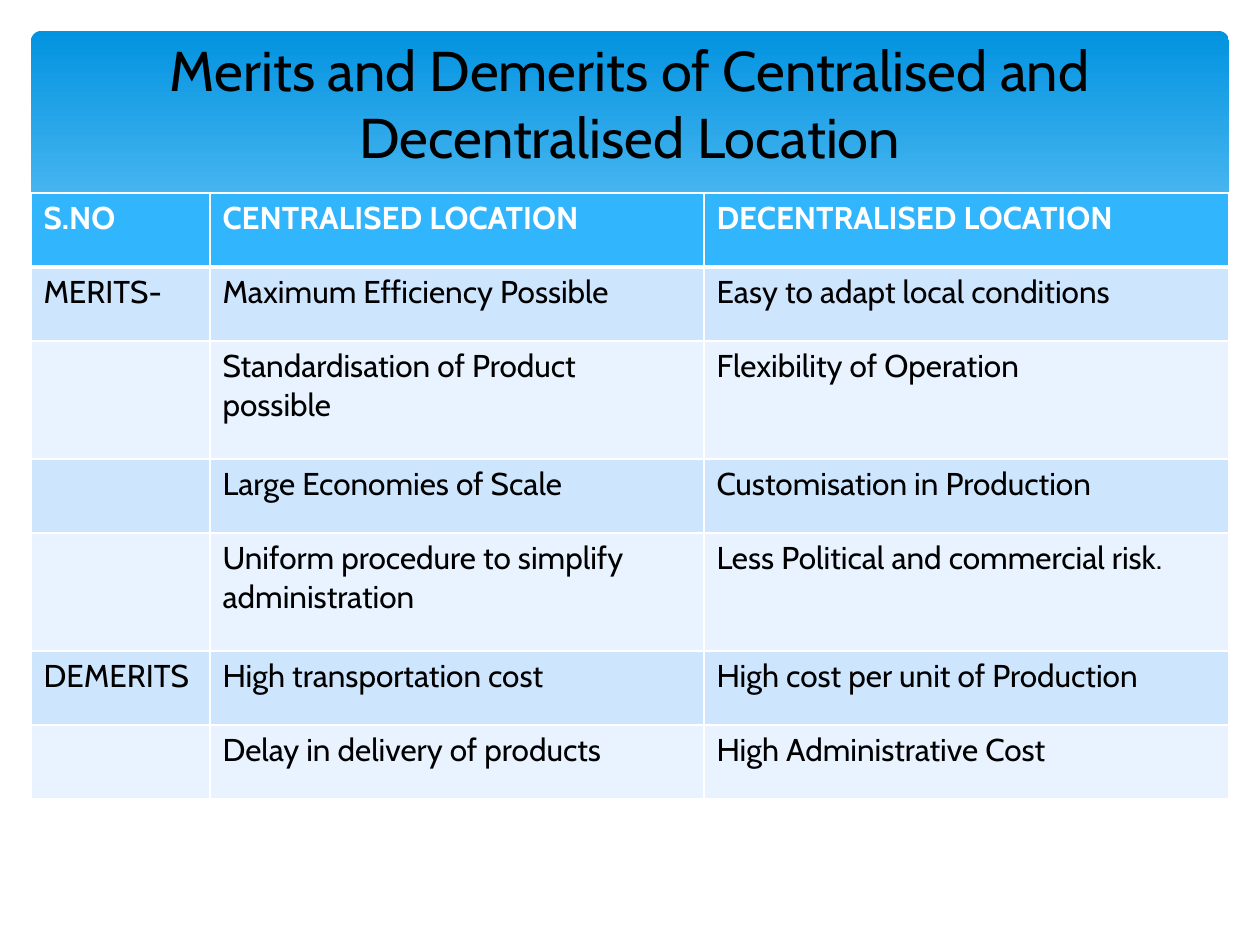
"""Slide comparing merits and demerits of centralised and decentralised location."""
from lxml import etree
from pptx import Presentation
from pptx.dml.color import RGBColor
from pptx.enum.shapes import MSO_SHAPE
from pptx.enum.text import MSO_ANCHOR, PP_ALIGN
from pptx.oxml.ns import qn
from pptx.util import Emu, Pt

ROUNDED = MSO_SHAPE.ROUNDED_RECTANGLE
MIDDLE = MSO_ANCHOR.MIDDLE
LEFT, CENTER = PP_ALIGN.LEFT, PP_ALIGN.CENTER
SCALE = 914400 / 126
COLORS = {
    "banner_top": "0293E0", "banner_bottom": "83D3FE", "header": "31B6FD",
    "dark_band": "CEE5FE", "light_band": "E8F3FF",
    "white": "FFFFFF", "black": "000000",
}


def px(length):
    return Emu(round(length * SCALE))


def write(frame, text, size=18, color="black", bold=False, align=LEFT):
    frame.word_wrap = True
    paragraph = frame.paragraphs[0]
    paragraph.alignment = align
    paragraph.font.size = Pt(size)
    run = paragraph.add_run()
    run.text = text
    run.font.name = "Cabin"
    run.font.size = Pt(size)
    run.font.bold = bold
    run.font.color.rgb = RGBColor.from_string(COLORS[color])


deck = Presentation()
deck.slide_width, deck.slide_height = px(1260), px(945)
slide = deck.slides.add_slide(deck.slide_layouts[6])

banner = slide.shapes.add_shape(ROUNDED, px(31), px(31), px(1198), px(340))
banner.shadow.inherit = False
banner.adjustments[0] = 0.03
banner.line.fill.background()
banner.fill.gradient()
banner.fill.gradient_angle = 270
for stop, position, color in zip(
    banner.fill.gradient_stops, (0, 0.9), ("banner_top", "banner_bottom")
):
    stop.position = position
    stop.color.rgb = RGBColor.from_string(COLORS[color])

wave_points = [
    (1231, 310), (1197, 323), (1147, 336), (1071, 347), (999, 348),
    (915, 343), (816, 330), (699, 309), (563, 277), (460, 255),
    (368, 239), (290, 233), (223, 232), (150, 236), (96, 246),
    (50, 258), (29, 268), (29, 415), (1231, 415),
]
wave_outline = slide.shapes.build_freeform(*wave_points[0], scale=SCALE)
wave_outline.add_line_segments(wave_points[1:], close=True)
wave = wave_outline.convert_to_shape()
wave.shadow.inherit = False
wave.fill.solid()
wave.fill.fore_color.rgb = RGBColor.from_string(COLORS["white"])
wave.line.fill.background()

title = slide.shapes.add_textbox(px(63), px(47), px(1134), px(111))
title.text_frame.vertical_anchor = MIDDLE
write(
    title.text_frame,
    "Merits and Demerits of Centralised and Decentralised Location",
    size=32, align=CENTER,
)

comparison = [
    ("S.NO", "CENTRALISED LOCATION", "DECENTRALISED LOCATION"),
    ("MERITS-", "Maximum Efficiency Possible", "Easy to adapt local conditions"),
    ("", "Standardisation of Product possible", "Flexibility of Operation"),
    ("", "Large Economies of Scale", "Customisation in Production"),
    ("", "Uniform procedure to simplify administration",
     "Less Political and commercial risk."),
    ("DEMERITS", "High transportation cost", "High cost per unit of Production"),
    ("", "Delay in delivery of products", "High Administrative Cost"),
]
column_widths = (179, 494, 525)
row_heights = (74, 74, 118, 74, 118, 74, 74)
table = slide.shapes.add_table(
    len(comparison), len(column_widths),
    px(31), px(193), px(sum(column_widths)), px(sum(row_heights)),
).table
for column, width in zip(table.columns, column_widths):
    column.width = px(width)
for row, height in zip(table.rows, row_heights):
    row.height = px(height)

for row_index, entries in enumerate(comparison):
    is_header = row_index == 0
    band = "header" if is_header else ("light_band", "dark_band")[row_index % 2]
    for column_index, entry in enumerate(entries):
        cell = table.cell(row_index, column_index)
        cell.fill.solid()
        cell.fill.fore_color.rgb = RGBColor.from_string(COLORS[band])
        if entry:
            write(cell.text_frame, entry, bold=is_header,
                  color="white" if is_header else "black")
        else:
            cell.text_frame.paragraphs[0].font.size = Pt(18)
        properties = cell.fill._xPr
        for order, side in enumerate(("lnL", "lnR", "lnT", "lnB")):
            thick = (is_header and side == "lnB") or (row_index == 1 and side == "lnT")
            border = etree.Element(qn(f"a:{side}"), w=str(Pt(3 if thick else 1)))
            border_fill = etree.SubElement(border, qn("a:solidFill"))
            etree.SubElement(border_fill, qn("a:srgbClr"), val=COLORS["white"])
            properties.insert(order, border)

deck.save("out.pptx")
